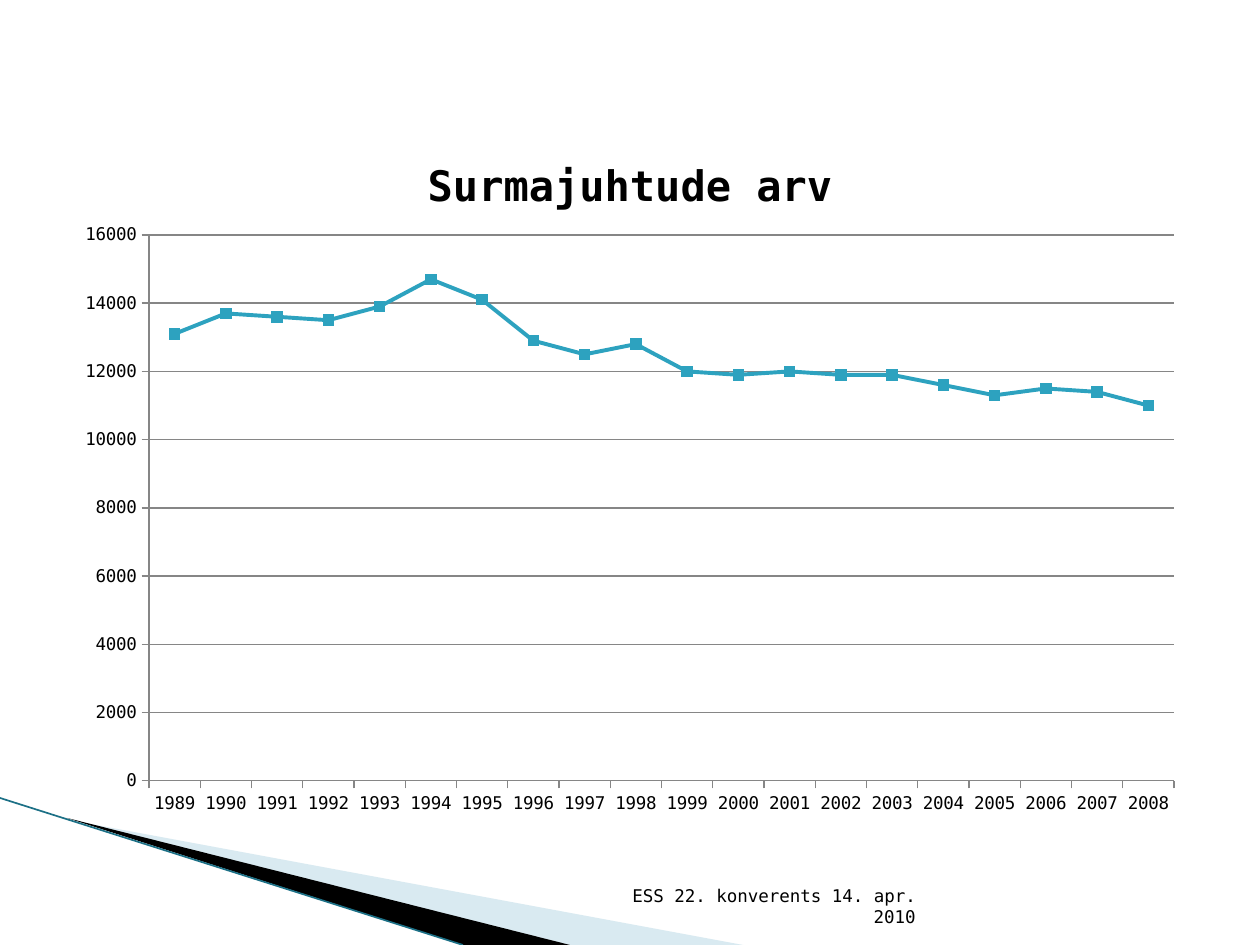
"""Build a slide with a line chart of yearly deaths above a corner ornament."""
from dataclasses import dataclass

from lxml import etree
from pptx import Presentation
from pptx.chart.data import CategoryChartData
from pptx.dml.color import RGBColor
from pptx.enum.chart import XL_CHART_TYPE, XL_MARKER_STYLE, XL_TICK_MARK
from pptx.enum.text import MSO_ANCHOR, PP_ALIGN
from pptx.oxml.ns import qn
from pptx.util import Emu, Pt

LINE = XL_CHART_TYPE.LINE_MARKERS
SQUARE = XL_MARKER_STYLE.SQUARE
OUT = XL_TICK_MARK.OUTSIDE
NO_TICK = XL_TICK_MARK.NONE
RIGHT = PP_ALIGN.RIGHT
BOTTOM = MSO_ANCHOR.BOTTOM

SCALE = 914400 / 126
FONT = "DejaVu Sans Mono"
COLORS = {
    "ink": "000000",
    "pale": "A0CBDC",
    "edge": "1C7086",
    "grid": "868686",
    "series": "2DA2BF",
}
DEATHS = (
    13100, 13700, 13600, 13500, 13900, 14700, 14100, 12900, 12500, 12800,
    12000, 11900, 12000, 11900, 11900, 11600, 11300, 11500, 11400, 11000,
)
FIRST_YEAR = 1989


@dataclass(frozen=True)
class Box:
    left: int
    top: int
    width: int
    height: int

    def emu(self) -> tuple:
        return tuple(px(n) for n in (self.left, self.top, self.width, self.height))


@dataclass(frozen=True)
class Wing:
    points: tuple
    color: str
    alpha: int = 100


CHART = Box(63, 129, 1134, 699)
PLOT = Box(149, 235, 1025, 546)
FOOTER = Box(604, 883, 324, 50)
WINGS = (
    Wing(((69, 820), (743, 945), (570, 945)), "pale", 40),
    Wing(((67, 818), (570, 945), (463, 945)), "ink"),
)


def px(n: float) -> Emu:
    return Emu(round(n * SCALE))


def rgb(name: str) -> RGBColor:
    return RGBColor.from_string(COLORS[name])


def style(font, size: float, bold: bool = False) -> None:
    font.name = FONT
    font.size = Pt(size)
    font.bold = bold
    font.color.rgb = rgb("ink")


def stroke(line, color: str, width: float) -> None:
    line.color.rgb = rgb(color)
    line.width = Pt(width)


def add_text(slide, text: str, box: Box, *, size: float, align, anchor) -> None:
    frame = slide.shapes.add_textbox(*box.emu()).text_frame
    frame.word_wrap = True
    frame.vertical_anchor = anchor
    para = frame.paragraphs[0]
    para.text = text
    para.alignment = align
    style(para.runs[0].font, size)


def add_wing(slide, wing: Wing) -> None:
    start, *rest = wing.points
    builder = slide.shapes.build_freeform(*start, scale=SCALE)
    builder.add_line_segments(rest, close=True)
    shape = builder.convert_to_shape()
    shape.shadow.inherit = False
    shape.fill.solid()
    shape.fill.fore_color.rgb = rgb(wing.color)
    shape.line.fill.background()
    if wing.alpha < 100:
        color = shape._element.spPr.find(qn("a:solidFill")).find(qn("a:srgbClr"))
        etree.SubElement(color, qn("a:alpha"), val=str(wing.alpha * 1000))


def add_edge(slide, start: tuple, end: tuple) -> None:
    edge = slide.shapes.add_connector(1, *(px(n) for n in start + end))
    stroke(edge.line, "edge", 0.95)
    etree.SubElement(edge._element.spPr, qn("a:effectLst"))


def place_plot(chart) -> None:
    area = chart._chartSpace.chart.plotArea
    for old in area.findall(qn("c:layout")):
        area.remove(old)
    layout = etree.Element(qn("c:layout"))
    area.insert(0, layout)
    manual = etree.SubElement(layout, qn("c:manualLayout"))
    parts = {
        "layoutTarget": "inner",
        "xMode": "edge",
        "yMode": "edge",
        "x": (PLOT.left - CHART.left) / CHART.width,
        "y": (PLOT.top - CHART.top) / CHART.height,
        "w": PLOT.width / CHART.width,
        "h": PLOT.height / CHART.height,
    }
    for name, value in parts.items():
        etree.SubElement(manual, qn(f"c:{name}"), val=str(value))


def add_chart(slide) -> None:
    data = CategoryChartData()
    data.categories = [str(FIRST_YEAR + n) for n in range(len(DEATHS))]
    data.add_series("Surmajuhtude arv", DEATHS)
    chart = slide.shapes.add_chart(LINE, *CHART.emu(), data).chart
    style(chart.font, 10)
    chart.has_legend = False
    chart.has_title = True
    title = chart.chart_title.text_frame
    title.text = "Surmajuhtude arv"
    style(title.paragraphs[0].runs[0].font, 24, bold=True)
    for axis in (chart.category_axis, chart.value_axis):
        axis.major_tick_mark = OUT
        axis.minor_tick_mark = NO_TICK
        stroke(axis.format.line, "grid", 0.75)
    values = chart.value_axis
    values.minimum_scale, values.maximum_scale, values.major_unit = 0, 16000, 2000
    values.has_major_gridlines = True
    stroke(values.major_gridlines.format.line, "grid", 0.75)
    plot = chart.plots[0]
    plot.vary_by_categories = False
    series = plot.series[0]
    series.smooth = False
    stroke(series.format.line, "series", 2.25)
    marker = series.marker
    marker.style, marker.size = SQUARE, 6
    marker.format.fill.solid()
    marker.format.fill.fore_color.rgb = rgb("series")
    marker.format.line.fill.background()
    place_plot(chart)


def main() -> None:
    deck = Presentation()
    deck.slide_width, deck.slide_height = px(1260), px(945)
    slide = deck.slides.add_slide(deck.slide_layouts[6])
    for wing in WINGS:
        add_wing(slide, wing)
    add_edge(slide, (0, 798), (463, 945))
    add_text(slide, "ESS 22. konverents 14. apr. 2010", FOOTER,
             size=10, align=RIGHT, anchor=BOTTOM)
    add_chart(slide)
    deck.save("out.pptx")


if __name__ == "__main__":
    main()
